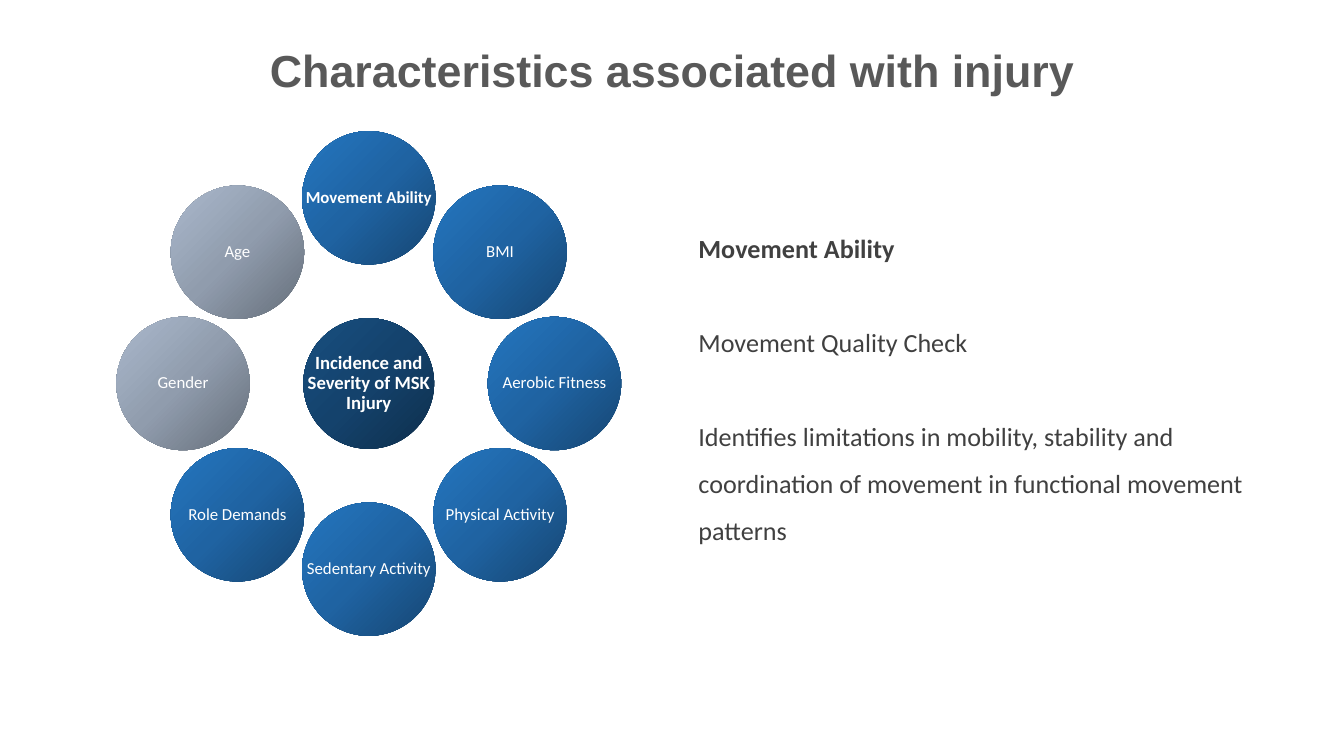
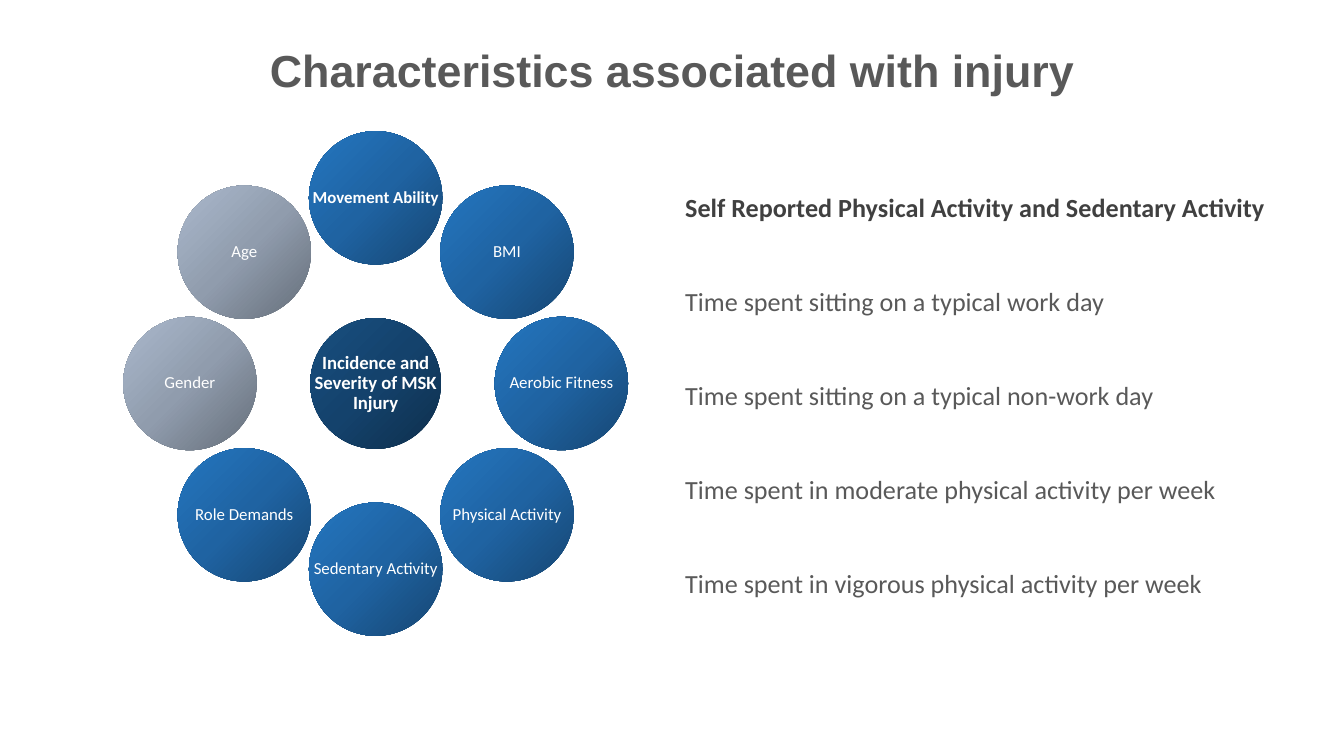
from copy import deepcopy
from math import cos, pi, sin

from pptx import Presentation
from pptx.dml.color import RGBColor
from pptx.enum.shapes import MSO_SHAPE
from pptx.enum.text import MSO_ANCHOR, PP_ALIGN
from pptx.oxml.ns import qn
from pptx.util import Cm, Pt

OVAL = MSO_SHAPE.OVAL
MIDDLE, TOP = MSO_ANCHOR.MIDDLE, MSO_ANCHOR.TOP
CENTER, LEFT = PP_ALIGN.CENTER, PP_ALIGN.LEFT

COLORS = {"title": "595959", "strong": "404040", "soft": "595959", "label": "FFFFFF"}
# Gradient stops, from the lower right to the upper left
GRADIENTS = {
    "core": ("0E2F4C", "14426C", "184F80"),
    "blue": ("164672", "1F63A2", "2476C0"),
    "grey": ("656E79", "909CAD", "ABB9CD"),
}

TITLE = "Characteristics associated with injury"
CORE_LABEL = "Incidence and\vSeverity of MSK\vInjury"
FACTORS = [  # clockwise from the top: label, gradient, bold
    ("Movement Ability", "blue", True),
    ("BMI", "blue", False),
    ("Aerobic Fitness", "blue", False),
    ("Physical Activity", "blue", False),
    ("Sedentary Activity", "blue", False),
    ("Role Demands", "blue", False),
    ("Gender", "grey", False),
    ("Age", "grey", False),
]
RING_SIZE, FACTOR_SIZE, CORE_SIZE = 9.54, 2.52, 2.47

SLIDES = [
    {
        "ring": (2.2, 2.48),
        "notes_box": (12.95, 3.97, 11.4, 7.2),
        "heading": "Movement Ability",
        "lines": [
            "Movement Quality Check",
            "Identifies limitations in mobility, stability and coordination of "
            "movement in functional movement patterns",
        ],
        "line_color": "strong",
    },
    {
        "ring": (2.33, 2.48),
        "notes_box": (12.7, 3.2, 11.81, 8.33),
        "heading": "Self Reported Physical Activity and Sedentary Activity",
        "lines": [
            "Time spent sitting on a typical work day",
            "Time spent sitting on a typical non-work day",
            "Time spent in moderate physical activity per week",
            "Time spent in vigorous physical activity per week",
        ],
        "line_color": "soft",
    },
]


def write(para, text, size=14, color="strong", bold=False, font="Calibri",
          align=LEFT, spacing=0.9, before=0):
    """Fill one paragraph with formatted text."""
    para.text = text
    para.alignment = align
    para.line_spacing = spacing
    para.space_before = Pt(before)
    para.font.name = font
    para.font.size = Pt(size)
    para.font.bold = bold
    para.font.color.rgb = RGBColor.from_string(COLORS[color])


def fill_gradient(shape, gradient):
    """Give the shape a diagonal gradient with three even stops."""
    shape.fill.gradient()
    shape.fill.gradient_angle = 135
    stop_list = shape.element.spPr.find(".//" + qn("a:gsLst"))
    stop_list.insert(1, deepcopy(stop_list[0]))
    for index, stop in enumerate(shape.fill.gradient_stops):
        stop.position = index / 2
        stop.color.rgb = RGBColor.from_string(GRADIENTS[gradient][index])


def add_circle(group, x, y, diameter, label, gradient, size, bold):
    """Draw a labelled circle centred on x, y."""
    circle = group.shapes.add_shape(OVAL, Cm(x - diameter / 2), Cm(y - diameter / 2),
                                    Cm(diameter), Cm(diameter))
    circle.shadow.inherit = False
    circle.line.fill.background()
    fill_gradient(circle, gradient)
    frame = circle.text_frame
    frame.word_wrap = False
    frame.vertical_anchor = MIDDLE
    frame.margin_left = frame.margin_right = Cm(0.03)
    frame.margin_top = frame.margin_bottom = Cm(0.03)
    write(frame.paragraphs[0], label, size=size, color="label", bold=bold, align=CENTER)


def add_title(page):
    title = page.shapes.title
    title.left, title.top, title.width, title.height = Cm(1.75), Cm(0), Cm(21.9), Cm(2.77)
    title.text_frame.vertical_anchor = MIDDLE
    write(title.text_frame.paragraphs[0], TITLE, size=24, color="title", bold=True,
          font="Arial", align=CENTER)


def add_factor_ring(page, left, top):
    """Place the injury circle in the middle and the factors around it."""
    group = page.shapes.add_group_shape()
    x, y = left + RING_SIZE / 2, top + RING_SIZE / 2
    orbit = (RING_SIZE - FACTOR_SIZE) / 2
    add_circle(group, x, y, CORE_SIZE, CORE_LABEL, "core", 10, True)
    for index, (label, gradient, bold) in enumerate(FACTORS):
        angle = 2 * pi * index / len(FACTORS)
        add_circle(group, x + orbit * sin(angle), y - orbit * cos(angle),
                   FACTOR_SIZE, label, gradient, 9, bold)


def add_notes(page, bounds, heading, lines, line_color):
    """Write the bold heading and the spaced lines below it."""
    box = page.shapes.add_textbox(*(Cm(length) for length in bounds))
    frame = box.text_frame
    frame.word_wrap = True
    frame.vertical_anchor = TOP
    write(frame.paragraphs[0], heading, bold=True, spacing=1.5)
    for line in lines:
        write(frame.add_paragraph(), line, color=line_color, spacing=1.5, before=25.2)


def main():
    deck = Presentation()
    deck.slide_width, deck.slide_height = Cm(25.4), Cm(14.29)
    title_only = deck.slide_layouts[5]
    for content in SLIDES:
        page = deck.slides.add_slide(title_only)
        add_title(page)
        add_factor_ring(page, *content["ring"])
        add_notes(page, content["notes_box"], content["heading"],
                  content["lines"], content["line_color"])
    deck.save("out.pptx")


if __name__ == "__main__":
    main()
